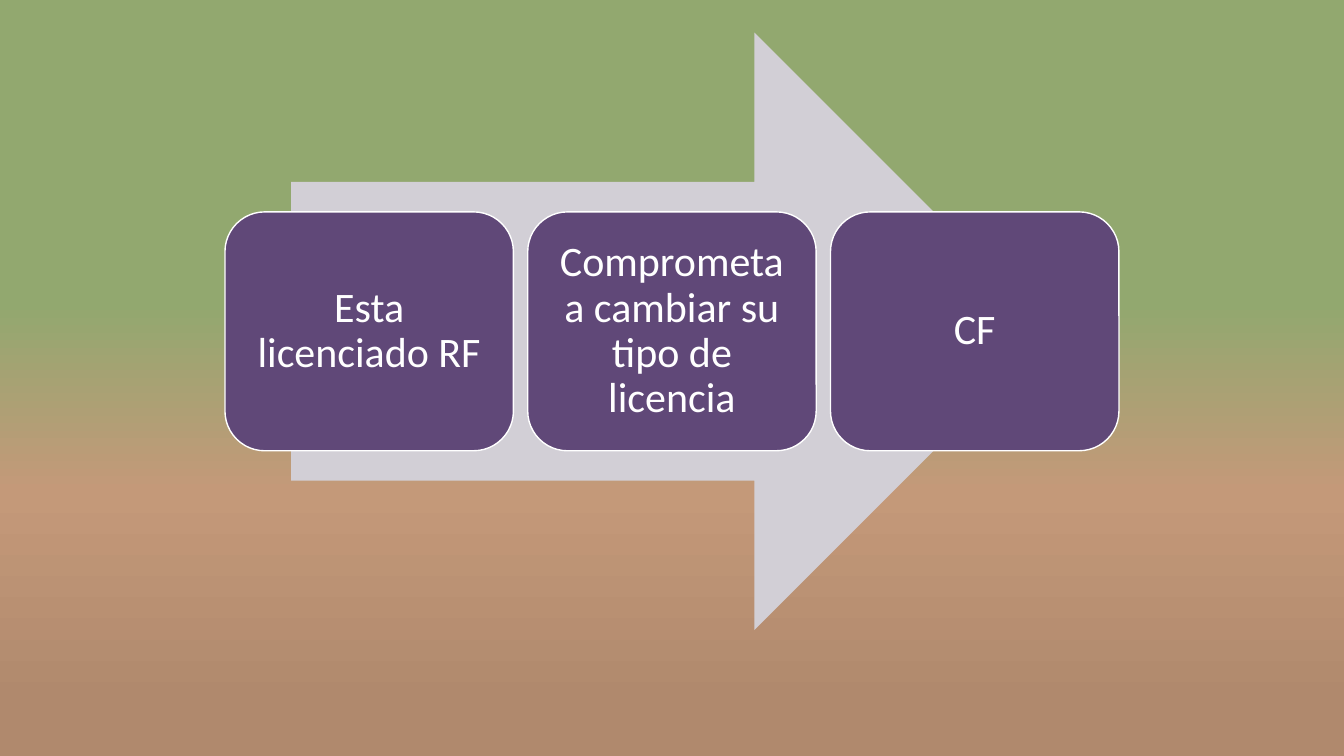
"""Build a slide with three licensing steps laid over a wide arrow."""
from copy import deepcopy

from pptx import Presentation
from pptx.dml.color import RGBColor
from pptx.enum.shapes import MSO_SHAPE as Preset
from pptx.enum.text import MSO_ANCHOR as Anchor, PP_ALIGN as Align
from pptx.oxml.ns import qn
from pptx.util import Cm, Pt

STEPS = ["Esta licenciado RF", "Comprometa a cambiar su tipo de licencia", "CF"]
COLORS = {
    "green": "92A86F",
    "sand": "C49979",
    "earth": "B0896D",
    "arrow": "D2CFD6",
    "step": "604878",
    "white": "FFFFFF",
}
BACKGROUND_STOPS = [(0.40, "green"), (0.65, "sand"), (0.93, "earth")]
SLIDE_SIZE = (33.87, 19.05)
ARROW_BOX = (7.34, 0.82, 19.2, 15.06)
STEP_LEFT, STEP_WIDTH, STEP_HEIGHT, STEP_GAP = 5.67, 7.27, 6.02, 0.36
STEP_INSET = 0.3


def rgb(name):
    return RGBColor.from_string(COLORS[name])


def paint_background(slide):
    fill = slide.background.fill
    fill.gradient()
    fill.gradient_angle = 270
    first_stop = next(slide.element.iter(qn("a:gs")))
    first_stop.addnext(deepcopy(first_stop))
    for stop, (position, color) in zip(fill.gradient_stops, BACKGROUND_STOPS):
        stop.position = position
        stop.color.rgb = rgb(color)


def add_preset(slide, preset, box, color):
    shape = slide.shapes.add_shape(preset, *map(Cm, box))
    shape.shadow.inherit = False
    shape.fill.solid()
    shape.fill.fore_color.rgb = rgb(color)
    shape.line.fill.background()
    return shape


def add_step(slide, text, box):
    shape = add_preset(slide, Preset.ROUNDED_RECTANGLE, box, "step")
    shape.line.color.rgb = rgb("white")
    shape.line.width = Pt(1)
    frame = shape.text_frame
    frame.word_wrap = True
    frame.vertical_anchor = Anchor.MIDDLE
    frame.margin_left = frame.margin_right = Cm(STEP_INSET)
    frame.margin_top = frame.margin_bottom = Cm(STEP_INSET)
    paragraph = frame.paragraphs[0]
    paragraph.alignment = Align.CENTER
    paragraph.line_spacing = 0.9
    run = paragraph.add_run()
    run.text = text
    run.font.name = "Calibri"
    run.font.size = Pt(30)
    run.font.color.rgb = rgb("white")


def main():
    presentation = Presentation()
    presentation.slide_width, presentation.slide_height = map(Cm, SLIDE_SIZE)
    slide = presentation.slides.add_slide(presentation.slide_layouts[6])
    paint_background(slide)
    add_preset(slide, Preset.RIGHT_ARROW, ARROW_BOX, "arrow")
    arrow_top, arrow_height = ARROW_BOX[1], ARROW_BOX[3]
    step_top = arrow_top + (arrow_height - STEP_HEIGHT) / 2
    for index, text in enumerate(STEPS):
        left = STEP_LEFT + index * (STEP_WIDTH + STEP_GAP)
        add_step(slide, text, (left, step_top, STEP_WIDTH, STEP_HEIGHT))
    presentation.save("out.pptx")


if __name__ == "__main__":
    main()
